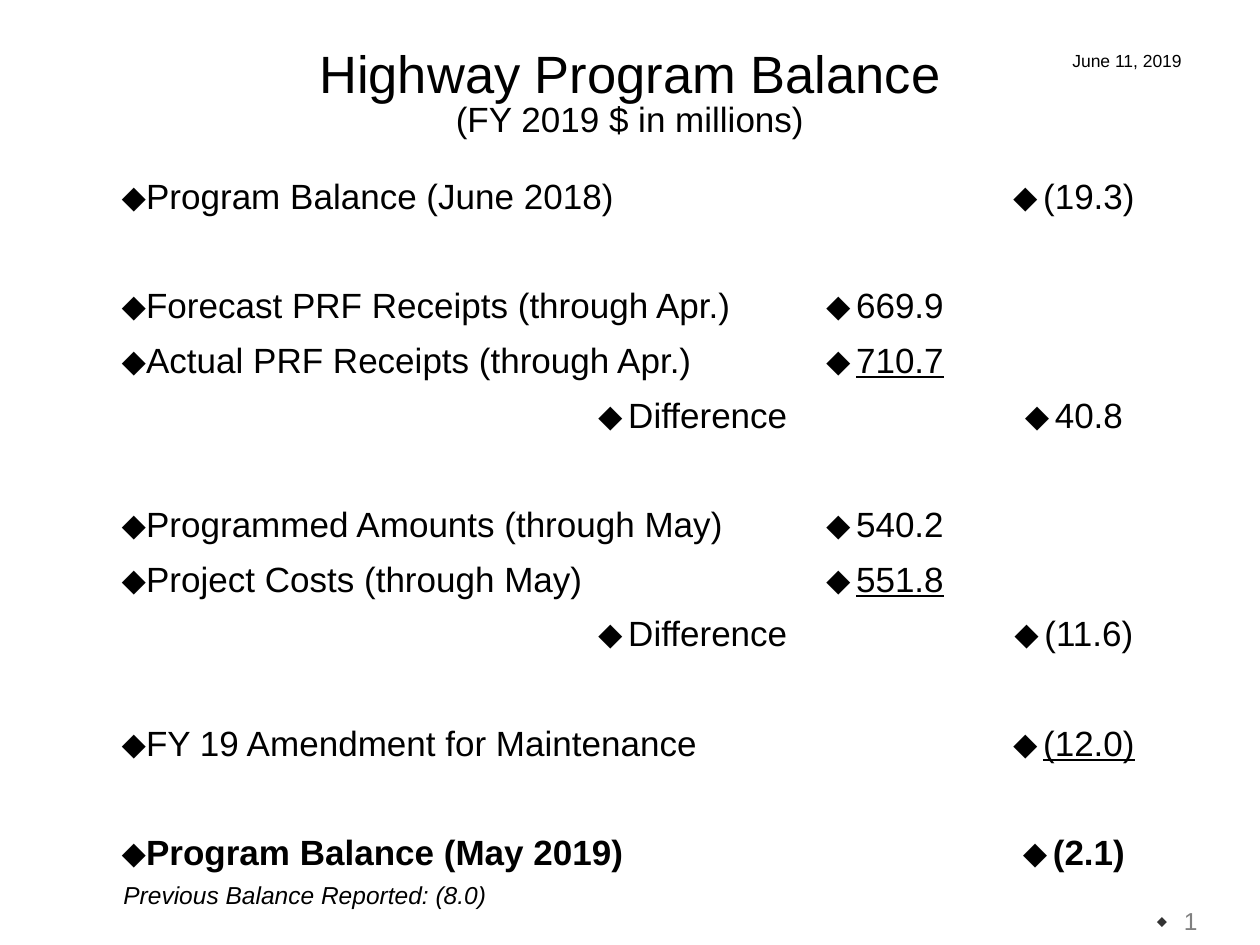
from lxml.etree import SubElement
from pptx import Presentation
from pptx.dml.color import RGBColor
from pptx.enum.text import MSO_ANCHOR as Anchor, PP_ALIGN as Align
from pptx.oxml.ns import qn
from pptx.util import Pt

PX = 914400 / 126
COLUMNS = (691, 170, 208)
BALANCE_ROWS = (
    ("Program Balance (June 2018)", "", "(19.3)"),
    ("", "", ""),
    ("Forecast PRF Receipts (through Apr.)", "669.9", ""),
    ("Actual PRF Receipts (through Apr.)", "710.7", ""),
    ("Difference", "", "40.8"),
    ("", "", ""),
    ("Programmed Amounts (through May)", "540.2", ""),
    ("Project Costs (through May)", "551.8", ""),
    ("Difference", "", "(11.6)"),
    ("", "", ""),
    ("FY 19 Amendment for Maintenance", "", "(12.0)"),
    ("", "", ""),
    ("Program Balance (May 2019)", "", "(2.1)"),
)
SUBTOTALED = {"710.7", "551.8", "(12.0)"}


def px(length):
    """Turn pixels into EMU."""
    return round(length * PX)


def color(value):
    """Turn a hex string into a colour."""
    return RGBColor.from_string(value)


def style(run, size, ink="000000", bold=False, italic=False, underline=False):
    """Format one run."""
    font = run.font
    font.name, font.size = "Arial", Pt(size)
    font.bold, font.italic, font.underline = bold, italic, underline
    font.color.rgb = color(ink)


def add_bullet(paragraph, hanging=0, percent=100, ink="000000"):
    """Give a paragraph a diamond bullet."""
    properties = paragraph._p.get_or_add_pPr()
    properties.set("marL", str(px(hanging)))
    properties.set("indent", str(-px(hanging)))
    bullet_color = SubElement(properties, qn("a:buClr"))
    SubElement(bullet_color, qn("a:srgbClr"), val=ink)
    SubElement(properties, qn("a:buSzPct"), val=str(percent * 1000))
    SubElement(properties, qn("a:buFont"), typeface="Arial")
    SubElement(properties, qn("a:buChar"), char="⬥")


def add_text(slide, box, text, align, anchor=Anchor.TOP):
    """Place a wrapped text box and return its paragraph."""
    frame = slide.shapes.add_textbox(*map(px, box)).text_frame
    frame.word_wrap = True
    frame.vertical_anchor = anchor
    paragraph = frame.paragraphs[0]
    paragraph.text = text
    paragraph.alignment = align
    return paragraph


def add_heading(slide, box):
    """Place the title, its unit line and the date."""
    left, top, width, height = box
    title = add_text(slide, box, "Highway Program Balance\v(FY 2019 $ in millions)",
                     Align.CENTER, Anchor.MIDDLE)
    title.line_spacing = 0.85
    for run, size in zip(title.runs, (30, 20)):
        style(run, size)
    date = add_text(slide, (left + width - 233, top + 19, 200, 34),
                    "June 11, 2019", Align.CENTER)
    style(date.runs[0], 10)


def fill_cell(cell, text, align, bold):
    """Write one bulleted table entry."""
    cell.fill.background()
    cell.vertical_anchor = Anchor.MIDDLE
    cell.margin_top = cell.margin_bottom = 0
    if text:
        paragraph = cell.text_frame.paragraphs[0]
        paragraph.text = text
        paragraph.alignment = align
        add_bullet(paragraph, hanging=0 if align == Align.LEFT else 30)
        style(paragraph.runs[0], 20, bold=bold, underline=text in SUBTOTALED)


def add_balance_table(slide, box):
    """Place the table of balances, receipts and costs."""
    table = slide.shapes.add_table(len(BALANCE_ROWS), len(COLUMNS), *map(px, box)).table
    table.first_row = table.horz_banding = False
    for column, width in zip(table.columns, COLUMNS):
        column.width = px(width)
    for row, entries in zip(table.rows, BALANCE_ROWS):
        label_align = Align.RIGHT if entries[0] == "Difference" else Align.LEFT
        aligns = (label_align, Align.CENTER, Align.CENTER)
        for cell, text, align in zip(row.cells, entries, aligns):
            fill_cell(cell, text, align, bold=entries is BALANCE_ROWS[-1])


def add_footer(slide, box):
    """Place the previous balance and the page number."""
    left, top, width, height = box
    previous = add_text(slide, (left, top, 544, 43),
                        "Previous Balance Reported: (8.0)", Align.LEFT)
    style(previous.runs[0], 14, italic=True)
    number = add_text(slide, (left + width - 302, top + height - 63, 302, 63),
                      "1", Align.RIGHT, Anchor.BOTTOM)
    add_bullet(number, hanging=27, percent=60, ink="333333")
    style(number.runs[0], 14, "808080")


def main():
    """Build the slide and save it."""
    deck = Presentation()
    deck.slide_width, deck.slide_height = px(1260), px(945)
    slide = deck.slides.add_slide(deck.slide_layouts[6])
    add_heading(slide, (0, 25, 1260, 140))
    add_balance_table(slide, (109, 170, sum(COLUMNS), 711))
    add_footer(slide, (111, 874, 1099, 68))
    deck.save("out.pptx")


if __name__ == "__main__":
    main()
